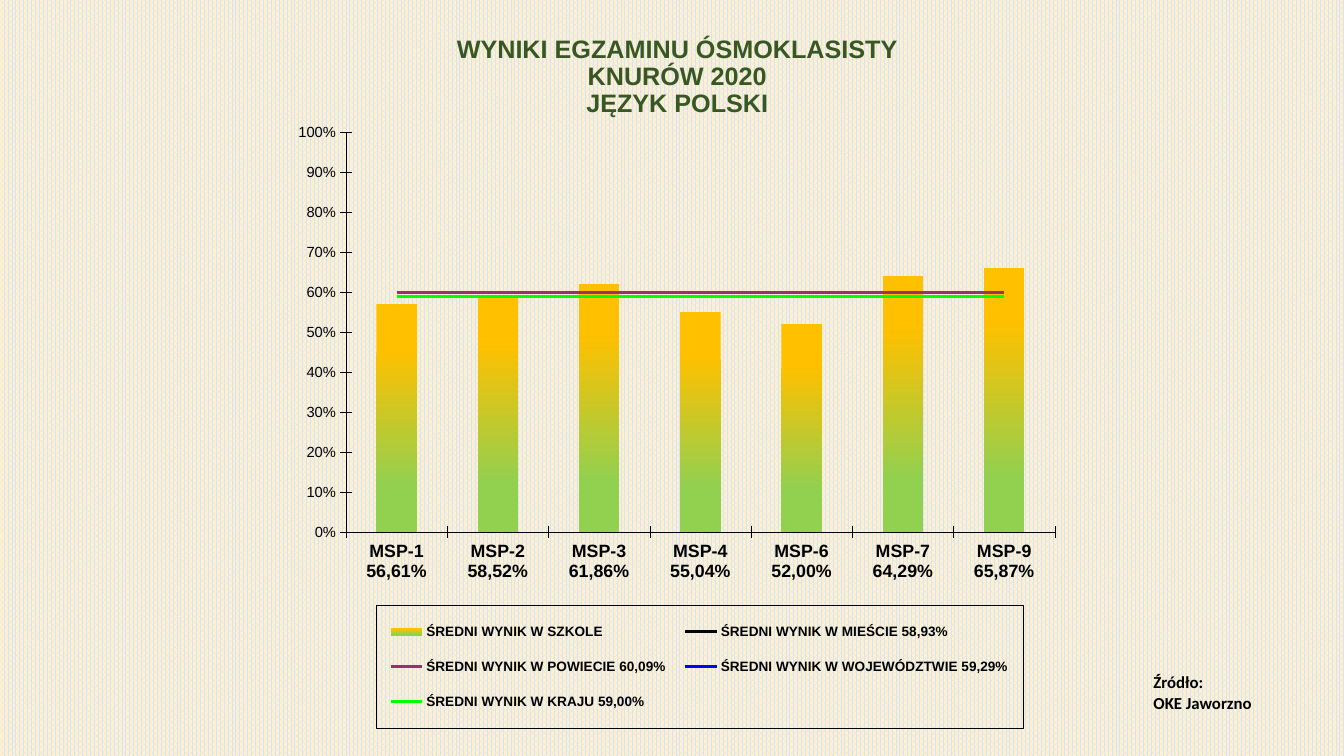
from dataclasses import dataclass

from lxml import etree
from pptx import Presentation
from pptx.chart.data import CategoryChartData
from pptx.dml.color import RGBColor
from pptx.enum.chart import XL_CHART_TYPE, XL_LEGEND_POSITION, XL_MARKER_STYLE, XL_TICK_MARK
from pptx.enum.dml import MSO_PATTERN
from pptx.enum.text import MSO_ANCHOR, MSO_AUTO_SIZE, PP_ALIGN
from pptx.util import Pt

BARS = XL_CHART_TYPE.COLUMN_CLUSTERED
RIGHT = XL_LEGEND_POSITION.RIGHT
BARE = XL_MARKER_STYLE.NONE
CROSS = XL_TICK_MARK.CROSS
DOTS = MSO_PATTERN.PERCENT_75
BOTTOM = MSO_ANCHOR.BOTTOM
FIXED = MSO_AUTO_SIZE.NONE
GROW = MSO_AUTO_SIZE.SHAPE_TO_FIT_TEXT
CENTER = PP_ALIGN.CENTER

HUES = {
    "ink": "000000", "title": "385723", "dots": "DAE3F3", "paper": "FFF2CC",
    "gold": "FFC000", "lime": "92D050", "plum": "993366", "blue": "0000FF",
    "green": "00FF00",
}
NS = ('xmlns:c="http://schemas.openxmlformats.org/drawingml/2006/chart" '
      'xmlns:a="http://schemas.openxmlformats.org/drawingml/2006/main"')


@dataclass
class Score:
    name: str
    points: float
    hue: str = "gold"

    def label(self) -> str:
        return f"{self.name} {self.points:.2f}%".replace(".", ",")

    def share(self) -> float:
        return round(self.points / 100, 2)


SCHOOLS = [
    Score("MSP-1", 56.61), Score("MSP-2", 58.52), Score("MSP-3", 61.86),
    Score("MSP-4", 55.04), Score("MSP-6", 52), Score("MSP-7", 64.29),
    Score("MSP-9", 65.87),
]
MEANS = [
    Score("ŚREDNI WYNIK W MIEŚCIE", 58.93, "ink"),
    Score("ŚREDNI WYNIK W POWIECIE", 60.09, "plum"),
    Score("ŚREDNI WYNIK W WOJEWÓDZTWIE", 59.29, "blue"),
    Score("ŚREDNI WYNIK W KRAJU", 59, "green"),
]


def rgb(hue: str) -> RGBColor:
    return RGBColor.from_string(HUES[hue])


def style(font, size: float, face: str = "Arial", hue: str = "ink", bold: bool = True) -> None:
    font.size, font.name, font.bold = Pt(size), face, bold
    font.color.rgb = rgb(hue)


def node(xml: str):
    """Parse one chart element, declaring the namespaces on its root."""
    tag, rest = xml.split(">", 1)
    return etree.fromstring(f"{tag} {NS}>{rest}")


def layout(box: tuple, inner: bool = False):
    modes = "".join(f'<c:{k}Mode val="edge"/>' for k in "xy")
    sizes = "".join(f'<c:{k} val="{v}"/>' for k, v in zip("xywh", box))
    target = '<c:layoutTarget val="inner"/>' if inner else ""
    return node(f"<c:layout><c:manualLayout>{target}{modes}{sizes}</c:manualLayout></c:layout>")


def axis(kind: str, own: int, other: int, side: str, extra: str = ""):
    return node(
        f'<c:{kind}><c:axId val="{own}"/><c:scaling><c:orientation val="minMax"/>{extra}</c:scaling>'
        f'<c:delete val="1"/><c:axPos val="{side}"/><c:crossAx val="{other}"/>'
        f'<c:crosses val="{"max" if side == "r" else "autoZero"}"/></c:{kind}>')


def split(chart) -> None:
    """Move the averages to a line plot on a hidden second pair of axes."""
    area = chart.element.xpath("c:chart/c:plotArea")[0]
    bars = area.xpath("c:barChart")[0]
    lines = node('<c:lineChart><c:grouping val="standard"/><c:varyColors val="0"/>'
                 '<c:marker val="1"/><c:axId val="5001"/><c:axId val="5002"/></c:lineChart>')
    bars.addnext(lines)
    mark = lines[2]
    for ser in bars.xpath("c:ser")[1:]:
        for flag in ser.xpath("c:invertIfNegative"):
            ser.remove(flag)
        mark.addprevious(ser)
    last = area.xpath("c:valAx")[-1]
    last.addnext(axis("valAx", 5002, 5001, "r", '<c:max val="1"/><c:min val="0"/>'))
    last.addnext(axis("catAx", 5001, 5002, "b"))
    for old in area.xpath("c:layout"):
        area.remove(old)
    area.insert(0, layout((0.112, 0.013, 0.778, 0.647), True))


def trim(rule, size: float, bold: bool) -> None:
    rule.has_major_gridlines = False
    rule.major_tick_mark = CROSS
    rule.format.line.color.rgb = rgb("ink")
    rule.format.line.width = Pt(0.25)
    style(rule.tick_labels.font, size, bold=bold)


def draw(slide) -> None:
    data = CategoryChartData(number_format="0%")
    data.categories = [school.label() for school in SCHOOLS]
    data.add_series("ŚREDNI WYNIK W SZKOLE", [school.share() for school in SCHOOLS])
    for mean in MEANS:
        data.add_series(mean.label(), [mean.share()] * len(SCHOOLS))
    chart = slide.shapes.add_chart(BARS, Pt(174.2), Pt(88.6), Pt(650.9), Pt(441.4), data).chart
    chart.has_title = False
    style(chart.font, 10.5, bold=False)

    # Visible axes, set before the hidden pair joins them
    trim(chart.category_axis, 12.7, True)
    scale = chart.value_axis
    trim(scale, 10.5, False)
    scale.minimum_scale, scale.maximum_scale, scale.major_unit = 0, 1, 0.1
    scale.tick_labels.number_format = "0%"
    scale.tick_labels.number_format_is_linked = False
    split(chart)

    # Columns
    bars, lines = chart.plots
    bars.gap_width = 150
    bars.vary_by_categories = False
    fill = bars.series[0].format.fill
    fill.gradient()
    fill.gradient_angle = 270
    for stop, (spot, hue) in zip(fill.gradient_stops, [(0.2, "gold"), (0.8, "lime")]):
        stop.position, stop.color.rgb = spot, rgb(hue)

    # Average lines
    for ser, mean in zip(lines.series, MEANS):
        ser.smooth = False
        ser.marker.style = BARE
        ser.format.line.color.rgb = rgb(mean.hue)
        ser.format.line.width = Pt(2.1)

    # Legend
    chart.has_legend = True
    key = chart.legend
    key.position = RIGHT
    key.include_in_layout = False
    style(key.font, 9.7)
    root = chart.element.xpath("c:chart/c:legend")[0]
    for old in root.xpath("c:layout"):
        root.remove(old)
    root.xpath("c:legendPos")[0].addnext(layout((0.145, 0.778, 0.71, 0.2)))
    root.xpath("c:overlay")[0].addnext(node(
        '<c:spPr><a:noFill/><a:ln w="3175"><a:solidFill>'
        f'<a:srgbClr val="{HUES["ink"]}"/></a:solidFill></a:ln></c:spPr>'))


def head(slide) -> None:
    title, sub = slide.placeholders
    sub.element.getparent().remove(sub.element)
    title.left, title.top, title.width, title.height = Pt(123.8), Pt(27), Pt(720), Pt(61.2)
    frame = title.text_frame
    frame.auto_size, frame.vertical_anchor = FIXED, BOTTOM
    para = frame.paragraphs[0]
    para.alignment, para.line_spacing = CENTER, 0.9
    for i, text in enumerate(["WYNIKI EGZAMINU ÓSMOKLASISTY", "KNURÓW 2020", "JĘZYK POLSKI"]):
        if i:
            para.add_line_break()
        run = para.add_run()
        run.text = text
        style(run.font, 18, hue="title")


def credit(slide) -> None:
    frame = slide.shapes.add_textbox(Pt(816.8), Pt(476.6), Pt(134), Pt(36)).text_frame
    frame.word_wrap, frame.auto_size = True, GROW
    for i, text in enumerate(["Źródło:", "OKE Jaworzno"]):
        para = frame.add_paragraph() if i else frame.paragraphs[0]
        run = para.add_run()
        run.text = text
        style(run.font, 12, "Calibri")


def main() -> None:
    deck = Presentation()
    deck.slide_width, deck.slide_height = Pt(960), Pt(540)
    slide = deck.slides.add_slide(deck.slide_layouts[0])

    # Dotted background
    fill = slide.background.fill
    fill.patterned()
    fill.pattern = DOTS
    fill.fore_color.rgb, fill.back_color.rgb = rgb("dots"), rgb("paper")

    head(slide)
    draw(slide)
    credit(slide)
    deck.save("out.pptx")


if __name__ == "__main__":
    main()
